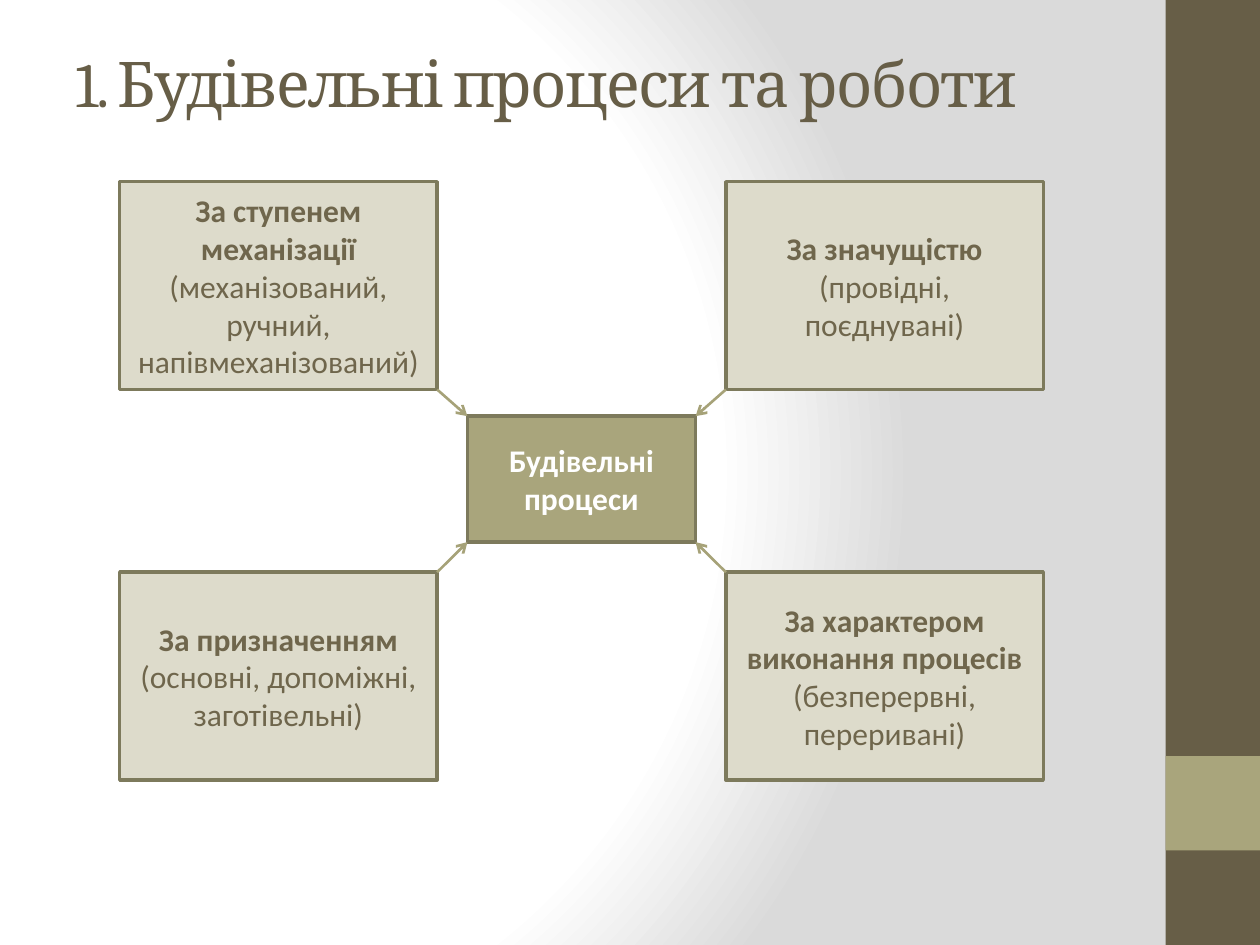
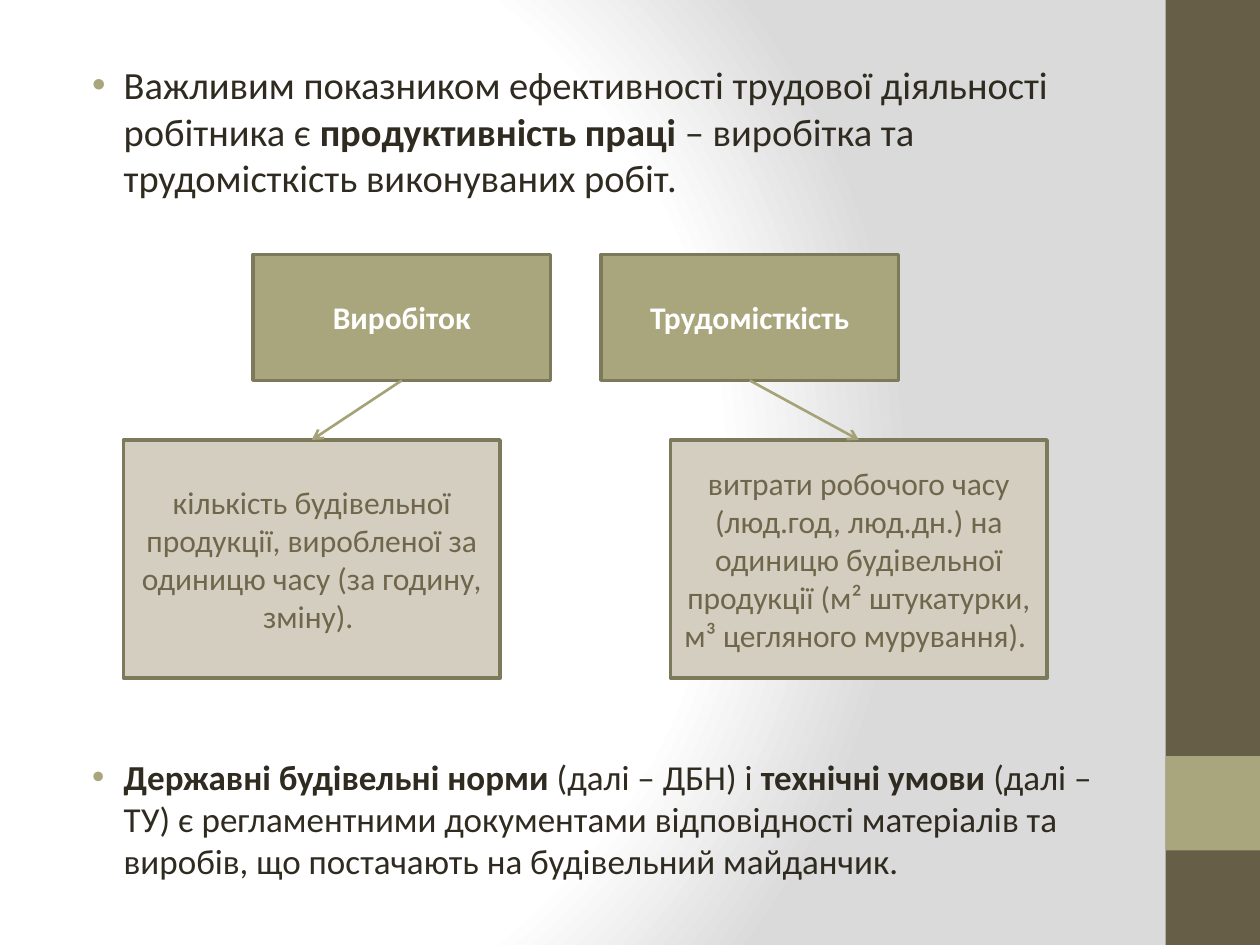
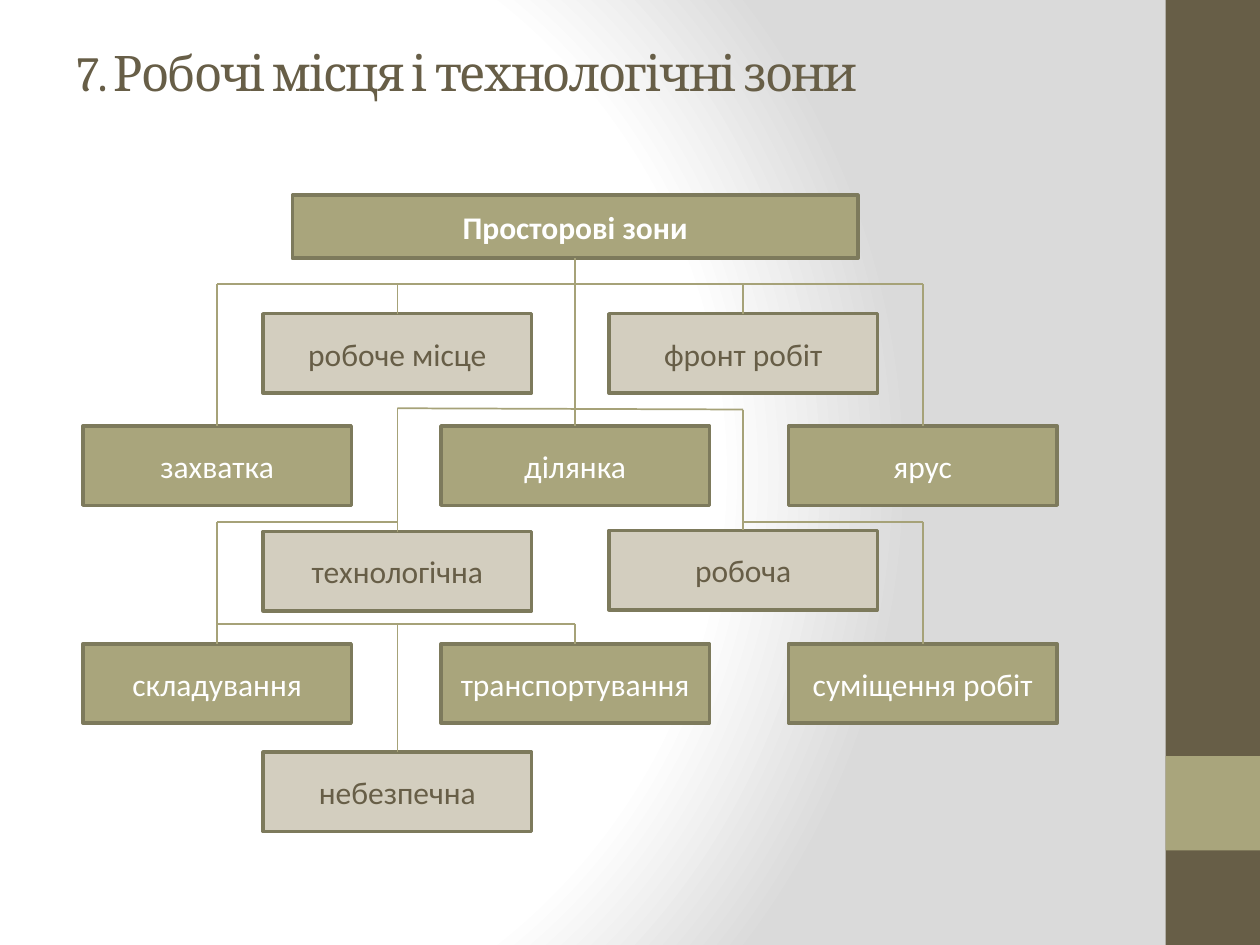
from collections import namedtuple

from pptx import Presentation
from pptx.dml.color import RGBColor
from pptx.enum.shapes import MSO_CONNECTOR as Connector, MSO_SHAPE as Shape
from pptx.enum.text import MSO_ANCHOR as Anchor, PP_ALIGN as Align
from pptx.oxml import parse_xml
from pptx.oxml.ns import nsdecls, qn
from pptx.oxml.xmlchemy import OxmlElement
from pptx.util import Pt

Box = namedtuple("Box", "left top width height")

COLOURS = {
    "band": "675E47", "accent": "A9A57C", "outline": "7D7A5C", "link": "A6A278",
    "card": "DDDBCB", "sand": "D3CEBF", "card text": "6F664C",
    "body": "2F2B20", "white": "FFFFFF", "shade": "DADADA",
}
HEADING_FONT, BODY_FONT = "Cambria", "Calibri"
PAGE_WIDTH, PAGE_HEIGHT = 720, 540
BANDS = [(Box(666, 0, 54, 540), "band"), (Box(666, 432, 54, 54), "accent")]
TOP, BOTTOM = 0, 2  # connection sites of a rectangle

GRADIENT = f"""<a:gradFill {nsdecls('a')} rotWithShape="1"><a:gsLst>
<a:gs pos="0"><a:srgbClr val="{COLOURS['white']}"/></a:gs>
<a:gs pos="75000"><a:srgbClr val="{COLOURS['white']}"/></a:gs>
<a:gs pos="100000"><a:srgbClr val="{COLOURS['shade']}"/></a:gs></a:gsLst>
<a:path path="circle"><a:fillToRect l="20000" t="50000" r="100000" b="50000"/></a:path>
</a:gradFill>"""


def colour(name):
    return RGBColor.from_string(COLOURS[name])


def within(area, left, top, width, height):
    """Box placed by its offset from the corner of an area."""
    return Box(area.left + left, area.top + top, width, height)


def points(box):
    return [Pt(length) for length in box]


def add_runs(para, runs, size, tint, font=BODY_FONT):
    """Add (text, bold) runs and return the spans."""
    spans = []
    for text, bold in runs:
        span = para.add_run()
        span.text = text
        span.font.name, span.font.size, span.font.bold = font, Pt(size), bold
        span.font.color.rgb = colour(tint)
        spans.append(span)
    return spans


def add_rectangle(page, box, fill):
    shape = page.shapes.add_shape(Shape.RECTANGLE, *points(box))
    shape.shadow.inherit = False
    shape.fill.solid()
    shape.fill.fore_color.rgb = colour(fill)
    shape.line.fill.background()
    return shape


def add_card(page, box, fill, tint, *paragraphs):
    """Outlined rectangle with centred paragraphs, each a list of runs."""
    card = add_rectangle(page, box, fill)
    card.line.color.rgb = colour("outline")
    card.line.width = Pt(2)
    frame = card.text_frame
    frame.word_wrap = True
    frame.vertical_anchor = Anchor.MIDDLE
    for index, runs in enumerate(paragraphs):
        para = frame.add_paragraph() if index else frame.paragraphs[0]
        para.alignment = Align.CENTER
        add_runs(para, runs, 18, tint)
    return card


def add_text_box(page, box, anchor):
    frame = page.shapes.add_textbox(*points(box)).text_frame
    frame.word_wrap = True
    frame.vertical_anchor = anchor
    return frame.paragraphs[0]


def add_title(page, box, text, size, anchor):
    para = add_text_box(page, box, anchor)
    for span in add_runs(para, [(text, False)], size, "band", HEADING_FONT):
        span.font._element.set("spc", "-100")


def add_bullet(page, box, runs, size):
    para = add_text_box(page, box, Anchor.TOP)
    para.space_before = Pt(0.2 * size)
    add_runs(para, runs, size, "body")
    properties = para._p.get_or_add_pPr()
    properties.set("marL", str(Pt(27)))
    properties.set("indent", str(-Pt(18)))
    properties.append(parse_xml(
        f'<a:buClr {nsdecls("a")}><a:srgbClr val="{COLOURS["accent"]}"/></a:buClr>'))
    properties.append(parse_xml(f'<a:buFont {nsdecls("a")} typeface="Arial"/>'))
    properties.append(parse_xml(f'<a:buChar {nsdecls("a")} char="•"/>'))


def locate(end):
    """Place of a line end: an (x, y) pair in points or a (card, site) pair."""
    if isinstance(end[0], (int, float)):
        return Pt(end[0]), Pt(end[1])
    card, site = end
    return card.left + card.width // 2, card.top + (card.height if site == BOTTOM else 0)


def add_link(page, start, end, width=1, arrow=False):
    link = page.shapes.add_connector(Connector.STRAIGHT, *locate(start), *locate(end))
    for target, join in ((start, link.begin_connect), (end, link.end_connect)):
        if not isinstance(target[0], (int, float)):
            join(*target)
    link.line.color.rgb = colour("link")
    link.line.width = Pt(width)
    if arrow:
        tail = OxmlElement("a:tailEnd")
        tail.set("type", "arrow")
        link.line._get_or_add_ln().append(tail)
    link._element.spPr.append(OxmlElement("a:effectLst"))


def new_page(deck):
    page = deck.slides.add_slide(deck.slide_layouts[6])
    page.background.fill.solid()
    backdrop = page.element.find(".//" + qn("p:bgPr"))
    backdrop.replace(backdrop[0], parse_xml(GRADIENT))
    for box, fill in BANDS:
        add_rectangle(page, box, fill)
    return page


def add_process_types(page, area):
    """Hub in the middle with an arrow from the card in each corner."""
    card_width, card_height = 181.4, 118.8
    hub = within(area, (area.width - 130.4) / 2, 134, 130.4, 72)
    add_card(page, hub, "accent", "white", [("Будівельні процеси", True)])
    cards = [
        (0, 0, [("За ступенем механізації ", True),
                ("(механізований, ручний, напівмеханізований)", False)]),
        (1, 0, [("За значущістю", True)], [("(провідні, поєднувані)", False)]),
        (0, 1, [("За призначенням ", True),
                ("(основні, допоміжні, заготівельні)", False)]),
        (1, 1, [("За характером виконання процесів ", True),
                ("(безперервні, переривані)", False)]),
    ]
    for column, row, *paragraphs in cards:
        box = within(area, column * (area.width - card_width),
                     row * (area.height - card_height), card_width, card_height)
        add_card(page, box, "card", "card text", *paragraphs)
        inner_corner = (box.left + (1 - column) * box.width,
                        box.top + (1 - row) * box.height)
        hub_corner = (hub.left + column * hub.width, hub.top + row * hub.height)
        add_link(page, inner_corner, hub_corner, 1.5, arrow=True)


def add_productivity(page, area):
    """Two terms, each with an arrow to its definition below."""
    width, height = 215.2, 136
    columns = [
        (74, 0, "Виробіток",
         "кількість будівельної продукції, виробленої за одиницю часу "
         "(за годину, зміну). "),
        (272.8, area.width - width, "Трудомісткість",
         "витрати робочого часу (люд.год, люд.дн.) на одиницю будівельної "
         "продукції (м² штукатурки, м³ цегляного мурування). "),
    ]
    for term_left, definition_left, name, meaning in columns:
        term = add_card(page, within(area, term_left, 0, 170, 72),
                        "accent", "white", [(name, True)])
        definition = add_card(
            page, within(area, definition_left, area.height - height, width, height),
            "sand", "card text", [(meaning, False)])
        add_link(page, (term, BOTTOM), (definition, TOP), 1.5, arrow=True)


def add_zone_tree(page, area):
    """Tree of zones on five column centres; odd columns are sand coloured."""
    width, height = 153.4, 45.4
    centres = [76.7, 179.7, 281.3, 377.3, 479.9]
    zones = [
        (1, 67.7, "робоче місце"), (3, 67.7, "фронт робіт"),
        (0, 131.8, "захватка"), (2, 131.8, "ділянка"), (4, 131.8, "ярус"),
        (1, 192.2, "технологічна"), (3, 191.5, "робоча"),
        (0, 256.3, "складування"), (2, 256.3, "транспортування"),
        (4, 256.3, "суміщення робіт"), (1, 318.2, "небезпечна"),
    ]
    root = add_card(page, within(area, centres[2] - 161.6, 0, 323.2, 36),
                    "accent", "white", [("Просторові зони", True)])
    cards = {}
    for column, top, name in zones:
        fill, tint = ("sand", "band") if column % 2 else ("accent", "white")
        box = within(area, centres[column] - width / 2, top, width, height)
        cards[name] = add_card(page, box, fill, tint, [(name, False)])

    def spot(column, level):
        return area.left + centres[column], area.top + level

    rails = [(0, 50.6, 4, 50.6), (1, 121.7, 3, 122.4), (0, 186.5, 1, 186.5),
             (3, 186.5, 4, 186.5), (0, 244.8, 2, 244.8)]
    drops = [
        (0, 50.6, "захватка"), (1, 50.6, "робоче місце"), (3, 50.6, "фронт робіт"),
        (4, 50.6, "ярус"), (1, 121.7, "технологічна"), (3, 122.4, "робоча"),
        (0, 186.5, "складування"), (4, 186.5, "суміщення робіт"),
        (1, 244.8, "небезпечна"), (2, 244.8, "транспортування"),
    ]
    add_link(page, (root, BOTTOM), (cards["ділянка"], TOP))
    for first, first_level, last, last_level in rails:
        add_link(page, spot(first, first_level), spot(last, last_level))
    for column, level, name in drops:
        add_link(page, spot(column, level), (cards[name], TOP))


def main():
    deck = Presentation()
    deck.slide_width, deck.slide_height = Pt(PAGE_WIDTH), Pt(PAGE_HEIGHT)

    page = new_page(deck)
    add_title(page, Box(36, 21.6, 600, 90), "1. Будівельні процеси та роботи",
              36, Anchor.TOP)
    add_process_types(page, Box(68.4, 103.8, 527.8, 342))

    page = new_page(deck)
    add_bullet(page, Box(36.6, 31.6, 600, 113), [
        ("Важливим показником ефективності трудової діяльності робітника є ", False),
        ("продуктивність праці ", True),
        ("– виробітка та трудомісткість виконуваних робіт.", False)], 22)
    add_productivity(page, Box(70.6, 145.4, 527.8, 242))
    add_bullet(page, Box(36.6, 428.4, 600, 87), [
        ("Державні будівельні норми", True), (" (далі – ДБН) і ", False),
        ("технічні умови", True),
        (" (далі – ТУ) є регламентними документами відповідності матеріалів "
         "та виробів, що постачають на будівельний майданчик.", False)], 20)

    page = new_page(deck)
    add_title(page, Box(36.6, 21, 600, 39.6), "7. Робочі місця і технологічні зони",
              28, Anchor.MIDDLE)
    add_zone_tree(page, Box(47.4, 111.6, 556.6, 363.6))

    deck.save("out.pptx")


if __name__ == "__main__":
    main()
